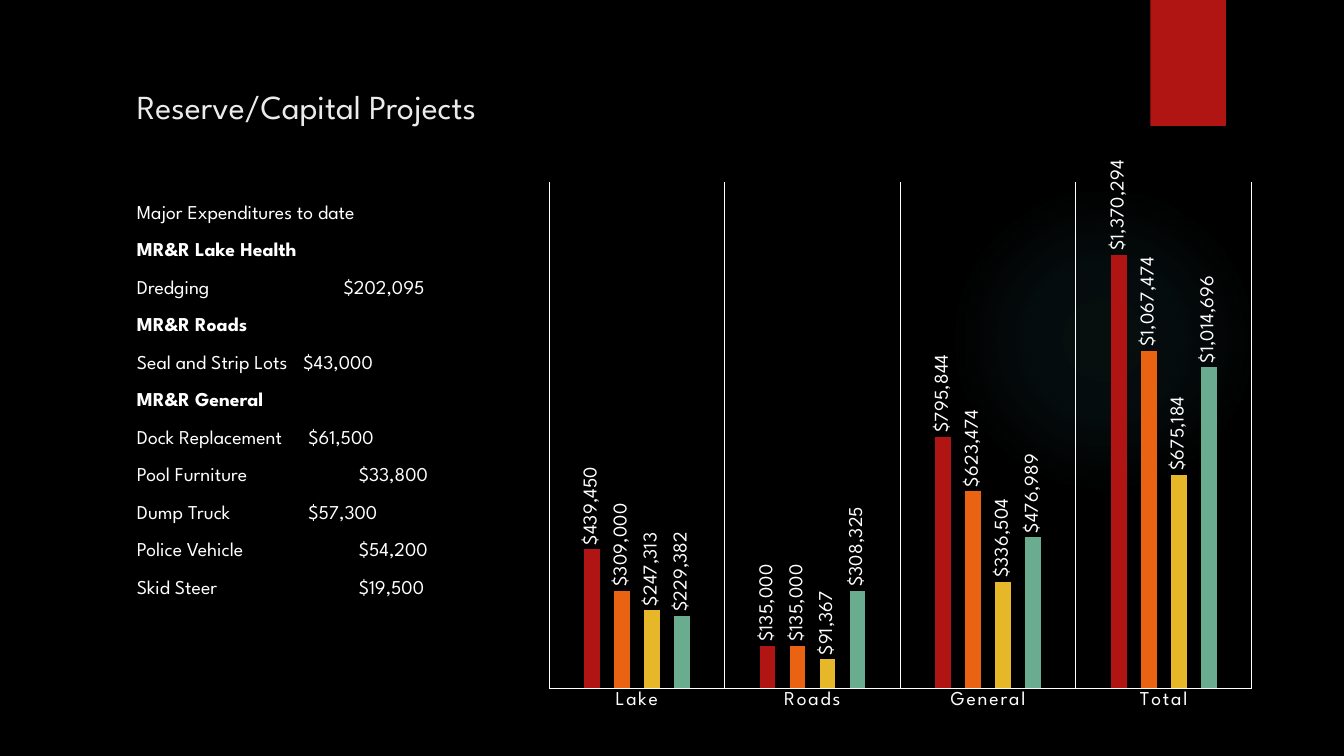
"""Build the reserve and capital projects slide."""
import pptx
import pptx.chart.data
import pptx.dml.color
import pptx.enum.chart
import pptx.enum.shapes
import pptx.oxml
import pptx.oxml.ns
import pptx.util

Inches, Pt = pptx.util.Inches, pptx.util.Pt
RGBColor = pptx.dml.color.RGBColor
BLACK = RGBColor(0x00, 0x00, 0x00)
WHITE = RGBColor(0xFF, 0xFF, 0xFF)
PALE = RGBColor(0xEB, 0xEB, 0xEB)
RED = RGBColor(0xB0, 0x15, 0x13)
ORANGE = RGBColor(0xEA, 0x63, 0x12)
YELLOW = RGBColor(0xE6, 0xB7, 0x29)
GREEN = RGBColor(0x6A, 0xAC, 0x90)
FONT = "League Spartan"
MONEY = '"$"#,##0'

TITLE = "Reserve/Capital Projects"
EXPENDITURES = [
    ("Major Expenditures to date", None, None),
    ("MR&R Lake Health", None, None),
    ("Dredging", "$202,095", 2.05),
    ("MR&R Roads", None, None),
    ("Seal and Strip Lots", "$43,000", 1.65),
    ("MR&R General", None, None),
    ("Dock Replacement", "$61,500", 1.7),
    ("Pool Furniture", "$33,800", 2.2),
    ("Dump Truck", "$57,300", 1.7),
    ("Police Vehicle", "$54,200", 2.2),
    ("Skid Steer", "$19,500", 2.2),
]
CATEGORIES = ["Lake", "Roads", "General", "Total"]
SERIES = [
    (RED, (439450, 135000, 795844, 1370294)),
    (ORANGE, (309000, 135000, 623474, 1067474)),
    (YELLOW, (247313, 91367, 336504, 675184)),
    (GREEN, (229382, 308325, 476989, 1014696)),
]
GLOW_STOPS = [(0, 7), (36, 6), (69, 0)]
PLOT_LAYOUT = {"x": 0.02, "y": 0.08, "w": 0.96, "h": 0.86}


def style(font, size, color):
    font.name, font.size = FONT, Pt(size)
    font.color.rgb = color


def add_shape(page, kind, *place):
    shape = page.shapes.add_shape(kind, *map(Inches, place))
    shape.shadow.inherit = False
    shape.line.fill.background()
    return shape


def add_glow(page):
    glow = add_shape(page, pptx.enum.shapes.MSO_SHAPE.OVAL, 9.41, 1.83, 3.08, 3.08)
    stops = "".join(
        f'<a:gs pos="{position * 1000}"><a:srgbClr val="50B9C1">'
        f'<a:alpha val="{alpha * 1000}"/></a:srgbClr></a:gs>'
        for position, alpha in GLOW_STOPS
    )
    gradient = pptx.oxml.parse_xml(
        f'<a:gradFill {pptx.oxml.ns.nsdecls("a")}><a:gsLst>{stops}</a:gsLst>'
        '<a:path path="circle"><a:fillToRect l="50000" t="50000" r="50000" b="50000"/>'
        "</a:path></a:gradFill>"
    )
    glow._element.spPr.find(pptx.oxml.ns.qn("a:prstGeom")).addnext(gradient)


def add_text_box(page, *place):
    box = page.shapes.add_textbox(*map(Inches, place))
    box.text_frame.word_wrap = True
    return box.text_frame


def add_expenditures(page):
    frame = add_text_box(page, 1.26, 1.93, 3.72, 4.65)
    for index, (label, amount, stop) in enumerate(EXPENDITURES):
        para = frame.add_paragraph() if index else frame.paragraphs[0]
        para.text = f"{label}\t{amount}" if amount else label
        para.line_spacing = Pt(16.8)
        if index:
            para.space_before = Pt(10)
        if amount:
            tabs = pptx.oxml.parse_xml(
                f'<a:tabLst {pptx.oxml.ns.nsdecls("a")}>'
                f'<a:tab pos="{Inches(stop)}" algn="l"/></a:tabLst>'
            )
            para._p.get_or_add_pPr().append(tabs)
        span = para.runs[0]
        style(span.font, 14, WHITE)
        span.font.bold = label.startswith("MR&R")


def add_budget_chart(page):
    data = pptx.chart.data.CategoryChartData(number_format=MONEY)
    data.categories = CATEGORIES
    for color, values in SERIES:
        data.add_series("", values)
    chart = page.shapes.add_chart(
        pptx.enum.chart.XL_CHART_TYPE.COLUMN_CLUSTERED,
        *map(Inches, (5.3, 1.34, 7.26, 5.84)), data
    ).chart
    style(chart.font, 14, WHITE)
    chart.has_title = chart.has_legend = False
    plot = chart.plots[0]
    plot.gap_width, plot.overlap, plot.vary_by_categories = 444, -90, False

    for series, (color, values) in zip(plot.series, SERIES):
        series.format.fill.solid()
        series.format.fill.fore_color.rgb = color
        labels = series.data_labels
        labels.show_value = True
        labels.position = pptx.enum.chart.XL_LABEL_POSITION.OUTSIDE_END
        labels.number_format, labels.number_format_is_linked = MONEY, False
        style(labels.font, 14, WHITE)
        for body in labels._element.xpath(".//a:bodyPr"):
            body.set("rot", "-5400000")
            body.set("vert", "horz")

    axis = chart.category_axis
    axis.major_tick_mark = pptx.enum.chart.XL_TICK_MARK.NONE
    axis.has_major_gridlines = True
    for line in (axis.format.line, axis.major_gridlines.format.line):
        line.color.rgb, line.width = WHITE, Pt(0.75)
    style(axis.tick_labels.font, 14, WHITE)
    for properties in axis._element.xpath(".//a:defRPr"):
        properties.set("spc", "120")
    values_axis = chart.value_axis
    values_axis.minimum_scale, values_axis.maximum_scale = 0, 1600000
    values_axis.has_major_gridlines = values_axis.visible = False

    area = chart._chartSpace.chart.plotArea
    for layout in area.xpath("c:layout"):
        area.remove(layout)
    edges = "".join(f'<c:{key}Mode val="edge"/>' for key in "xy")
    sizes = "".join(f'<c:{key} val="{part}"/>' for key, part in PLOT_LAYOUT.items())
    area.insert(0, pptx.oxml.parse_xml(
        f'<c:layout {pptx.oxml.ns.nsdecls("c")}><c:manualLayout>'
        f'<c:layoutTarget val="inner"/>{edges}{sizes}</c:manualLayout></c:layout>'
    ))


def main():
    deck = pptx.Presentation()
    deck.slide_width, deck.slide_height = Inches(13.33), Inches(7.5)
    page = deck.slides.add_slide(deck.slide_layouts[6])
    page.background.fill.solid()
    page.background.fill.fore_color.rgb = BLACK
    add_glow(page)
    ribbon = add_shape(page, pptx.enum.shapes.MSO_SHAPE.RECTANGLE, 11.41, 0, 0.75, 1.25)
    ribbon.fill.solid()
    ribbon.fill.fore_color.rgb = RED
    title = add_text_box(page, 1.26, 0.8, 3.72, 1.13)
    title.text = TITLE
    style(title.paragraphs[0].runs[0].font, 24, PALE)
    add_expenditures(page)
    add_budget_chart(page)
    deck.save("out.pptx")


if __name__ == "__main__":
    main()
